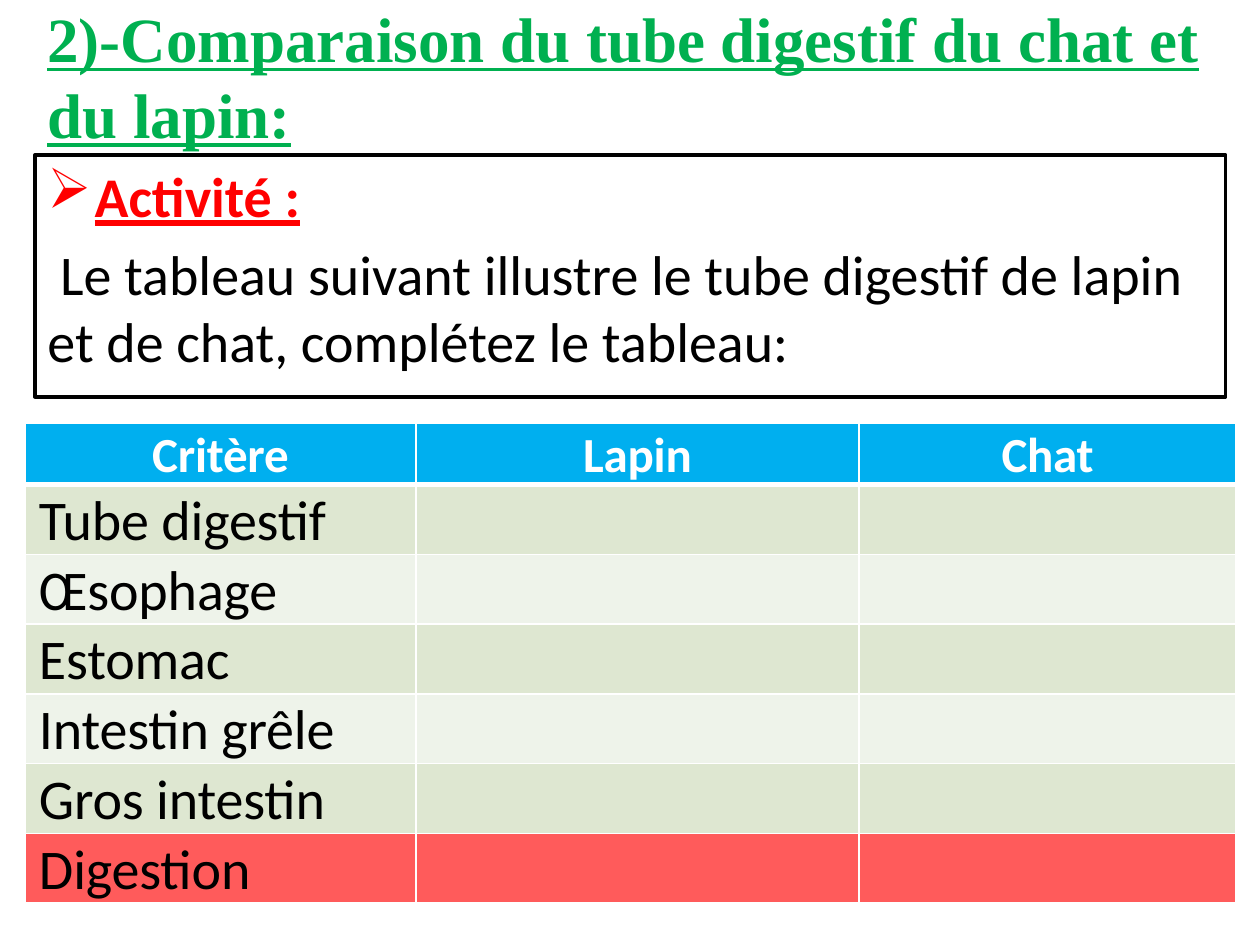
from lxml import etree
from pptx import Presentation
from pptx.dml.color import RGBColor
from pptx.enum.shapes import MSO_SHAPE
from pptx.enum.text import MSO_ANCHOR, PP_ALIGN
from pptx.oxml.ns import qn
from pptx.util import Pt

RECTANGLE = MSO_SHAPE.RECTANGLE
MIDDLE, TOP = MSO_ANCHOR.MIDDLE, MSO_ANCHOR.TOP
LEFT, CENTER = PP_ALIGN.LEFT, PP_ALIGN.CENTER

COLORS = {
    "title": "00B050",
    "activity": "FF0000",
    "text": "000000",
    "white": "FFFFFF",
    "header": "00AFEF",
    "odd": "DEE7D1",
    "even": "EEF3EA",
    "digestion": "FF5B5B",
}
HEADINGS = ["Critère", "Lapin", "Chat"]
CRITERIA = ["Tube digestif", "Œsophage", "Estomac", "Intestin grêle",
            "Gros intestin", "Digestion"]
COLUMN_WIDTHS = [223.2, 253.4, 215.3]
HEADER_HEIGHT, ROW_HEIGHT = 31.7, 36


def rgb(name):
    return RGBColor.from_string(COLORS[name])


def write(paragraph, text, size=32, font="Calibri", color="text", bold=False,
          underline=False, align=LEFT, before=0, spacing=0):
    paragraph.alignment = align
    paragraph.space_before = Pt(before)
    run = paragraph.add_run()
    run.text = text
    run.font.size = Pt(size)
    run.font.name = font
    run.font.bold = bold
    run.font.underline = underline
    run.font.color.rgb = rgb(color)
    if spacing:
        run.font._element.set("spc", str(round(spacing * 100)))


def add_arrow_bullet(paragraph, indent):
    properties = paragraph._p.get_or_add_pPr()
    properties.set("marL", str(Pt(indent)))
    properties.set("indent", str(-Pt(indent)))
    etree.SubElement(properties, qn("a:buChar")).set("char", "➢")


def set_margins(frame, left, top, right, bottom):
    frame.margin_left, frame.margin_top = Pt(left), Pt(top)
    frame.margin_right, frame.margin_bottom = Pt(right), Pt(bottom)


def set_borders(cell, color, **widths):
    properties = cell._tc.get_or_add_tcPr()
    for position, (side, width) in enumerate(widths.items()):
        line = etree.Element(qn(f"a:ln{side}"), w=str(Pt(width)))
        fill = etree.SubElement(line, qn("a:solidFill"))
        etree.SubElement(fill, qn("a:srgbClr")).set("val", COLORS[color])
        properties.insert(position, line)


def add_title(slide, left, top, width, height):
    frame = slide.shapes.add_textbox(Pt(left), Pt(top), Pt(width), Pt(height)).text_frame
    frame.word_wrap = True
    frame.vertical_anchor = MIDDLE
    write(frame.paragraphs[0], "2)-Comparaison du tube digestif du chat et du lapin:",
          size=36, font="Times New Roman", color="title", bold=True, underline=True)


def add_activity(slide, left, top, width, height):
    panel = slide.shapes.add_shape(RECTANGLE, Pt(left), Pt(top), Pt(width), Pt(height))
    panel.shadow.inherit = False
    panel.fill.solid()
    panel.fill.fore_color.rgb = rgb("white")
    panel.line.color.rgb = rgb("text")
    panel.line.width = Pt(2)
    frame = panel.text_frame
    frame.word_wrap = True
    frame.vertical_anchor = TOP
    activity = frame.paragraphs[0]
    write(activity, "Activité :", color="activity", bold=True, underline=True, before=6.4)
    add_arrow_bullet(activity, 27)
    write(frame.add_paragraph(),
          " Le tableau suivant illustre le tube digestif de lapin et de chat, "
          "complétez le tableau:", before=6.4)


def add_comparison(slide, left, top, width, height):
    table = slide.shapes.add_table(len(CRITERIA) + 1, len(HEADINGS), Pt(left), Pt(top),
                                   Pt(width), Pt(height)).table
    for column, column_width in zip(table.columns, COLUMN_WIDTHS):
        column.width = Pt(column_width)
    bands = ["header"] + ["odd", "even"] * 2 + ["odd", "digestion"]
    for index, (row, band) in enumerate(zip(table.rows, bands)):
        row.height = Pt(ROW_HEIGHT if index else HEADER_HEIGHT)
        for cell in row.cells:
            cell.fill.solid()
            cell.fill.fore_color.rgb = rgb(band)
            set_borders(cell, "white", L=1, R=1, T=3 if index == 1 else 1,
                        B=1 if index else 3)
    for column, heading in enumerate(HEADINGS):
        cell = table.cell(0, column)
        set_margins(cell, 0, 1.4, 0, 0)
        write(cell.text_frame.paragraphs[0], heading, size=28, color="white", bold=True,
              align=CENTER, before=1.8, spacing=-0.1)
    for row, criterion in enumerate(CRITERIA, start=1):
        cell = table.cell(row, 0)
        set_margins(cell, 7.9, 1.4, 0, 0)
        write(cell.text_frame.paragraphs[0], criterion, before=1.6, spacing=-0.1)


def main():
    presentation = Presentation()
    presentation.slide_width, presentation.slide_height = Pt(720), Pt(540)
    slide = presentation.slides.add_slide(presentation.slide_layouts[6])
    add_title(slide, 20, -2, 686, 90)
    add_activity(slide, 20, 88.6, 680.4, 138.2)
    add_comparison(slide, 14.4, 242, sum(COLUMN_WIDTHS),
                   HEADER_HEIGHT + len(CRITERIA) * ROW_HEIGHT)
    presentation.save("out.pptx")


if __name__ == "__main__":
    main()
